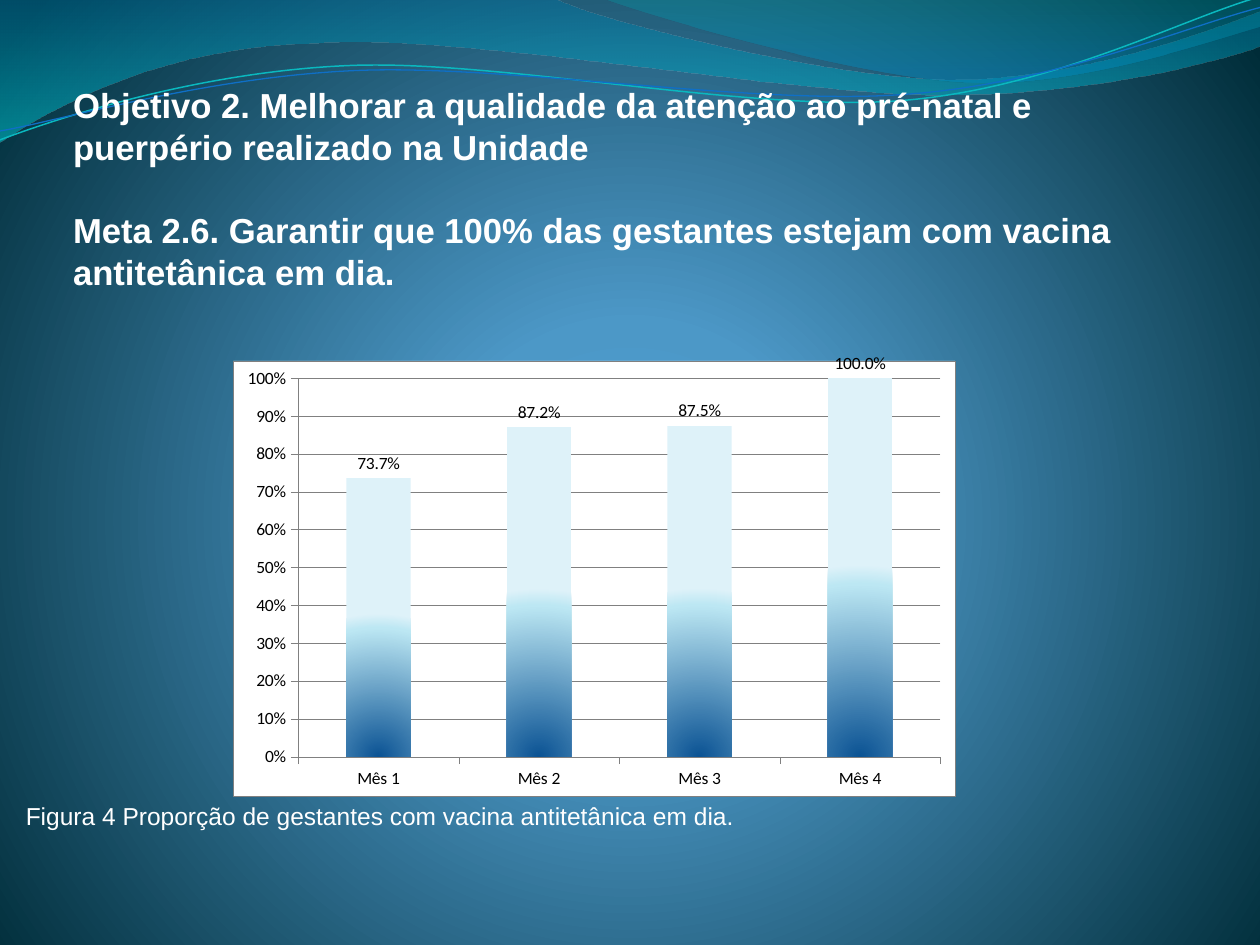
import math
from dataclasses import dataclass

from pptx import Presentation, util as u
from pptx.chart.data import CategoryChartData
from pptx.dml.color import RGBColor
from pptx.enum import chart as ch, text
from pptx.oxml import parse_xml
from pptx.oxml.ns import nsdecls, qn

Inches, Pt = u.Inches, u.Pt


@dataclass(frozen=True)
class Theme:
    font: str = "Arial"
    chart_font: str = "Calibri"
    title_size: float = 19.8
    title_pitch: float = 23.8
    caption_size: float = 14
    chart_size: float = 10
    white: str = "FFFFFF"
    black: str = "000000"
    grey: str = "808080"
    teal_line: str = "0AB8BF"
    blue_line: str = "0F6FC6"
    # Gradient stops: position %, colour, opacity %
    backdrop: tuple = ((0, "4AA0D6", 100), (25, "4C98C7", 100), (100, "002C38", 100))
    wide_wave: tuple = ((0, "0074A1", 45), (100, "00C6CF", 55))
    right_wave: tuple = ((0, "00A1A9", 30), (80, "008BBF", 45))
    bar: tuple = ((0, "0B5394", 100), (90, "BCE7F3", 100), (100, "DEF2F9", 100))


T = Theme()
LINEAR_DOWN = '<a:lin ang="5400000" scaled="0"/>'
TILT = 357.3


def rgb(value):
    return RGBColor.from_string(value)


def radial(l, t, r, b):
    return (f'<a:path path="circle"><a:fillToRect l="{l}000" t="{t}000" '
            f'r="{r}000" b="{b}000"/></a:path>')


def paint_gradient(fill, element, stops, direction):
    """Give the first fill inside element a gradient."""
    fill.solid()
    solid = element.find(".//" + qn("a:solidFill"))
    marks = "".join(
        f'<a:gs pos="{pos * 1000}"><a:srgbClr val="{color}">'
        f'<a:alpha val="{alpha * 1000}"/></a:srgbClr></a:gs>'
        for pos, color, alpha in stops)
    solid.getparent().replace(solid, parse_xml(
        f'<a:gradFill {nsdecls("a")} rotWithShape="1"><a:gsLst>{marks}</a:gsLst>'
        f'{direction}</a:gradFill>'))


def style_line(line, color, width):
    line.color.rgb = rgb(color)
    line.width = Pt(width)


def style_font(font, name, size, color, bold=False):
    font.name, font.size, font.bold = name, Pt(size), bold
    font.color.rgb = rgb(color)


def write(sp, box, *paragraphs, size, color, bold=False, pitch=None, gap=0,
          align=text.PP_ALIGN.LEFT, anchor=text.MSO_ANCHOR.TOP, insets=(0, 0, 0, 0)):
    sp.left, sp.top, sp.width, sp.height = map(Inches, box)
    tf = sp.text_frame
    tf.word_wrap = True
    tf.auto_size = text.MSO_AUTO_SIZE.NONE
    tf.vertical_anchor = anchor
    tf.margin_left, tf.margin_top, tf.margin_right, tf.margin_bottom = map(Inches, insets)
    for i, words in enumerate(paragraphs):
        p = tf.paragraphs[0] if i == 0 else tf.add_paragraph()
        p.alignment = align
        p.space_before = Pt(gap if i else 0)
        if pitch:
            p.line_spacing = Pt(pitch)
        r = p.add_run()
        r.text = words
        style_font(r.font, T.font, size, color, bold)


def turn(points, degrees, center):
    """Turn points clockwise around center."""
    c, n = math.cos(math.radians(degrees)), math.sin(math.radians(degrees))
    cx, cy = center
    return [(cx + (x - cx) * c - (y - cy) * n, cy + (x - cx) * n + (y - cy) * c)
            for x, y in points]


def add_wave(s, segments, stops=None, line=None, center=None):
    """Draw lines (x, y) and cubic curves (three points); a center tilts the frame."""
    points = [seg[i:i + 2] for seg in segments for i in range(0, len(seg), 2)]
    if center:
        points = turn(points, -TILT, center)
    start, *rest = [(Inches(x), Inches(y)) for x, y in points]
    builder = s.shapes.build_freeform(*start)
    builder.add_line_segments(rest, close=bool(stops))
    sp = builder.convert_to_shape()
    sp.shadow.inherit = False

    # Join each three points of a curve into one cubic segment
    nodes = iter(sp._element.findall(".//" + qn("a:lnTo")))
    for seg in segments[1:]:
        first = next(nodes)
        if len(seg) == 6:
            curve = parse_xml(f'<a:cubicBezTo {nsdecls("a")}/>')
            first.addprevious(curve)
            for node in (first, next(nodes), next(nodes)):
                curve.append(node[0])
                node.getparent().remove(node)

    if center:
        sp.rotation = TILT
    if stops:
        paint_gradient(sp.fill, sp._element, stops, LINEAR_DOWN)
        sp.line.fill.background()
    else:
        sp.fill.background()
        style_line(sp.line, *line)


def add_waves(s):
    add_wave(s, [(0, 0), (4.4, -0.01), (4.76, 0.17, 6.64, 0.63, 7.58, 0.63),
                 (8.53, 0.63, 9.58, 0.26, 10, 0.09), (10.01, 0.36),
                 (9.83, 0.44, 8.7, 0.76, 7.46, 0.75),
                 (6.22, 0.75, 3.82, 0.28, 2.57, 0.34),
                 (1.29, 0.36, 0.46, 0.83, -0.01, 1.13)], stops=T.wide_wave)
    add_wave(s, [(4.79, -0.01), (5.09, 0.11, 6.82, 0.62, 7.69, 0.65),
                 (8.56, 0.69, 9.61, 0.32, 10, 0.21), (10, 0)], stops=T.right_wave)
    add_wave(s, [(0, 1.11), (0.48, 0.93, 1.58, 0.57, 2.77, 0.52),
                 (3.95, 0.47, 5.93, 0.89, 7.13, 0.8),
                 (8.33, 0.71, 9.38, 0.15, 9.98, -0.02)],
             line=(T.teal_line, 0.85), center=(4.99, 0.58))
    add_wave(s, [(0, 1.04), (0.47, 0.96, 1.64, 0.61, 2.83, 0.56),
                 (4.03, 0.51, 5.97, 0.84, 7.17, 0.75),
                 (8.36, 0.67, 9.41, 0.21, 10, 0.06)],
             line=(T.blue_line, 0.75), center=(5, 0.59))


def add_title(s, box):
    title = s.shapes.title
    s.shapes._spTree.append(title._element)  # in front of the waves
    write(title, box,
          "Objetivo 2. Melhorar a qualidade da atenção ao pré-natal e "
          "puerpério realizado na Unidade",
          "Meta 2.6. Garantir que 100% das gestantes estejam com vacina "
          "antitetânica em dia.",
          size=T.title_size, color=T.white, bold=True,
          pitch=T.title_pitch, gap=T.title_pitch,
          anchor=text.MSO_ANCHOR.BOTTOM, insets=(0, 0, 0.02, 1.84))


def add_caption(s, box):
    caption = s.placeholders[1]
    s.shapes._spTree.append(caption._element)
    write(caption, box,
          "Figura 4 Proporção de gestantes com vacina antitetânica em dia.",
          size=T.caption_size, color=T.white,
          align=text.PP_ALIGN.RIGHT, insets=(0, 0.04, 1.75, 0.05))


def add_vaccine_chart(s, box):
    data = CategoryChartData(number_format="0.0%")
    data.categories = [f"Mês {n}" for n in range(1, 5)]
    data.add_series("Series 1", (0.737, 0.872, 0.875, 1))
    chart = s.shapes.add_chart(
        ch.XL_CHART_TYPE.COLUMN_CLUSTERED, *map(Inches, box), data).chart
    chart.has_legend = chart.has_title = False
    style_font(chart.font, T.chart_font, T.chart_size, T.black)

    # Chart frame and plot position
    chart._chartSpace.find(qn("c:txPr")).addprevious(parse_xml(
        f'<c:spPr {nsdecls("c", "a")}><a:solidFill><a:srgbClr val="{T.white}"/></a:solidFill>'
        f'<a:ln w="3175"><a:solidFill><a:srgbClr val="{T.grey}"/></a:solidFill></a:ln></c:spPr>'))
    area = chart._chartSpace.chart.plotArea
    for old in area.findall(qn("c:layout")):
        area.remove(old)
    places = "".join(f'<c:{k} val="{v}"/>' for k, v in (
        ("layoutTarget", "inner"), ("xMode", "edge"), ("yMode", "edge"),
        ("x", 0.09), ("y", 0.04), ("w", 0.89), ("h", 0.87)))
    area.insert(0, parse_xml(
        f'<c:layout {nsdecls("c")}><c:manualLayout>{places}</c:manualLayout></c:layout>'))

    # Axes
    value = chart.value_axis
    value.minimum_scale, value.maximum_scale, value.major_unit = 0, 1, 0.1
    value.tick_labels.number_format = "0%"
    value.tick_labels.number_format_is_linked = False
    style_line(value.major_gridlines.format.line, T.grey, 0.25)
    for axis in (value, chart.category_axis):
        axis.major_tick_mark = ch.XL_TICK_MARK.OUTSIDE
        style_font(axis.tick_labels.font, T.chart_font, T.chart_size, T.black)
        style_line(axis.format.line, T.grey, 0.25)

    # Bars and labels
    plot = chart.plots[0]
    plot.gap_width, plot.vary_by_categories = 150, False
    bars = plot.series[0]
    paint_gradient(bars.format.fill, bars._element, T.bar, radial(50, 100, 50, 0))
    labels = bars.data_labels
    labels.show_value = True
    labels.number_format, labels.number_format_is_linked = "0.0%", False
    labels.position = ch.XL_LABEL_POSITION.OUTSIDE_END
    style_font(labels.font, T.chart_font, T.chart_size, T.black)


def main():
    prs = Presentation()
    prs.slide_width, prs.slide_height = Inches(10), Inches(7.5)
    s = prs.slides.add_slide(prs.slide_layouts[0])
    paint_gradient(s.background.fill, s._element, T.backdrop, radial(10, 110, 10, 100))
    add_waves(s)
    add_title(s, (0.58, 1.17, 8.59, 2.99))
    add_caption(s, (-1.01, 6.32, 8.59, 0.71))
    add_vaccine_chart(s, (1.85, 2.81, 5.73, 3.51))
    prs.save("out.pptx")


if __name__ == "__main__":
    main()
